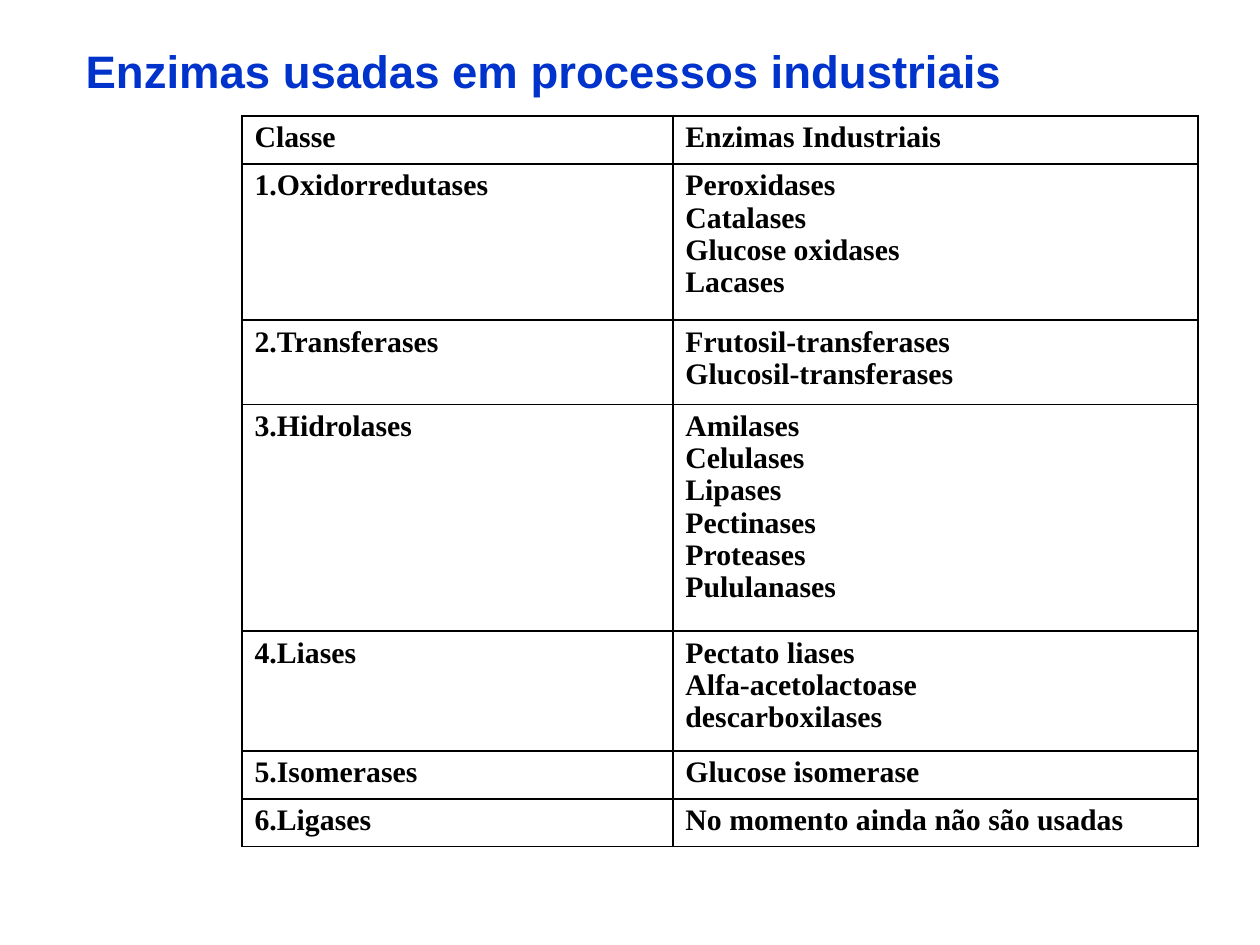
"""Build a slide with a table of the enzyme classes used in industry."""
from lxml import etree
from pptx import Presentation
from pptx import util as u
from pptx.dml.color import RGBColor
from pptx.enum import text
from pptx.oxml.ns import qn

COLORS = {"title": "0033CC", "ink": "000000"}
ENZYMES = [
    ("Classe", ["Enzimas Industriais"], 0.38),
    ("1.Oxidorredutases", ["Peroxidases", "Catalases", "Glucose oxidases", "Lacases"], 1.24),
    ("2.Transferases", ["Frutosil-transferases", "Glucosil-transferases"], 0.67),
    ("3.Hidrolases", ["Amilases", "Celulases", "Lipases", "Pectinases", "Proteases",
                      "Pululanases"], 1.8),
    ("4.Liases", ["Pectato liases", "Alfa-acetolactoase", "descarboxilases"], 0.95),
    ("5.Isomerases", ["Glucose isomerase"], 0.38),
    ("6.Ligases", ["No momento ainda não são usadas"], 0.38),
]


def format_paragraph(paragraph, font_name, size, color, alignment):
    paragraph.alignment = alignment
    paragraph.font.name = font_name
    paragraph.font.size = u.Pt(size)
    paragraph.font.bold = True
    paragraph.font.color.rgb = RGBColor.from_string(COLORS[color])


def add_borders(cell):
    properties = cell._tc.get_or_add_tcPr()
    for position, side in enumerate(("lnL", "lnR", "lnT", "lnB")):
        border = etree.Element(qn(f"a:{side}"), w=str(u.Pt(1)))
        fill = etree.SubElement(border, qn("a:solidFill"))
        etree.SubElement(fill, qn("a:srgbClr"), val=COLORS["ink"])
        properties.insert(position, border)


prs = Presentation()
prs.slide_width, prs.slide_height = u.Inches(10), u.Inches(7.5)
slide = prs.slides.add_slide(prs.slide_layouts[5])

title = slide.shapes.title
title.left, title.top = u.Inches(0.58), u.Inches(0.25)
title.width, title.height = u.Inches(9), u.Inches(1.25)
heading = title.text_frame
heading.text = "Enzimas usadas em processos industriais"
heading.vertical_anchor = text.MSO_ANCHOR.TOP
heading.margin_top = u.Inches(0.09)
format_paragraph(heading.paragraphs[0], "Arial", 26, "title", text.PP_ALIGN.LEFT)

enzyme_table = slide.shapes.add_table(
    len(ENZYMES), 2, u.Inches(1.92), u.Inches(0.92), u.Inches(7.59), u.Inches(5.8)
).table
enzyme_table.first_row = enzyme_table.horz_banding = False
enzyme_table.columns[0].width = u.Inches(3.42)
enzyme_table.columns[1].width = u.Inches(4.17)

for row, (enzyme_class, enzymes, height) in enumerate(ENZYMES):
    enzyme_table.rows[row].height = u.Inches(height)
    for column, lines in enumerate(([enzyme_class], enzymes)):
        cell = enzyme_table.cell(row, column)
        cell.text = "\n".join(lines)
        cell.fill.background()
        add_borders(cell)
        for paragraph in cell.text_frame.paragraphs:
            paragraph.line_spacing = 0.97
            format_paragraph(paragraph, "Times New Roman", 17, "ink", text.PP_ALIGN.JUSTIFY)

prs.save("out.pptx")
